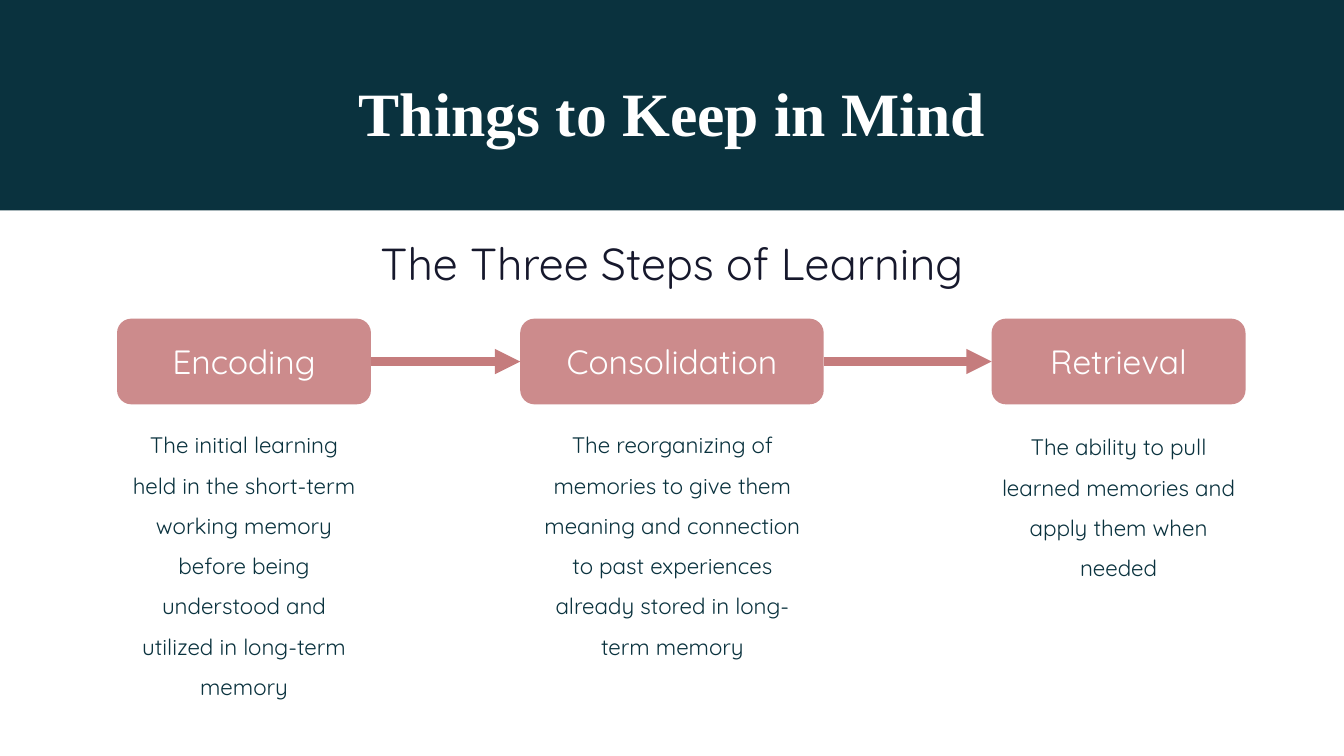
import pptx
import pptx.dml.color
import pptx.enum.shapes
import pptx.enum.text
import pptx.oxml.xmlchemy
import pptx.oxml.ns
import pptx.util
from pptx.util import Cm

COLORS = {"teal": "0A323E", "navy": "16182C", "rose": "C57C7D", "white": "FFFFFF"}
BODY_FONT = "Quicksand"
BOX_TOP, BOX_HEIGHT = 8.03, 2.16


def fill_shape(shape, color):
    shape.shadow.inherit = False
    shape.fill.solid()
    shape.fill.fore_color.rgb = pptx.dml.color.RGBColor.from_string(COLORS[color])
    shape.line.fill.background()


def write_text(shape, text, size, color, font=BODY_FONT, bold=False, spacing=None,
               anchor=pptx.enum.text.MSO_ANCHOR.TOP, wrap=True):
    frame = shape.text_frame
    frame.word_wrap = wrap
    frame.auto_size = pptx.enum.text.MSO_AUTO_SIZE.NONE
    frame.vertical_anchor = anchor
    paragraph = frame.paragraphs[0]
    paragraph.alignment = pptx.enum.text.PP_ALIGN.CENTER
    if spacing:
        paragraph.line_spacing = spacing
    run = paragraph.add_run()
    run.text = text
    run.font.name = font
    run.font.size = pptx.util.Pt(size)
    run.font.bold = bold
    run.font.color.rgb = pptx.dml.color.RGBColor.from_string(COLORS[color])


presentation = pptx.Presentation()
presentation.slide_width = Cm(33.87)
presentation.slide_height = Cm(19.05)
slide = presentation.slides.add_slide(presentation.slide_layouts[5])
shapes = slide.shapes

# Header band, placed behind the title
band = shapes.add_shape(pptx.enum.shapes.MSO_SHAPE.RECTANGLE,
                        0, 0, presentation.slide_width, Cm(5.3))
fill_shape(band, "teal")
shapes._spTree.insert(2, band._element)

# Title and subtitle
title = shapes.title
title.left, title.top, title.width, title.height = Cm(8.13), Cm(1.75), Cm(17.63), Cm(2.13)
write_text(title, "Things to Keep in Mind", 44, "white",
           font="Times New Roman", bold=True, wrap=False)
subtitle = shapes.add_textbox(Cm(8.71), Cm(5.82), Cm(16.46), Cm(1.63))
write_text(subtitle, "The Three Steps of Learning", 32, "navy")

# Steps: name, box left and width, description, its left, top, width and height
steps = [
    ("Encoding", 2.95, 6.4,
     "The initial learning held in the short-term working memory before being "
     "understood and utilized in long-term memory", 2.95, 10.41, 6.4, 7.32),
    ("Consolidation", 13.11, 7.65,
     "The reorganizing of memories to give them meaning and connection to past "
     "experiences already stored in long-term memory", 13.26, 10.41, 7.37, 7.32),
    ("Retrieval", 24.99, 6.4,
     "The ability to pull learned memories and apply them when needed",
     24.99, 10.46, 6.4, 4.24),
]
step_boxes = []
for name, left, width, description, *note_place in steps:
    box = shapes.add_shape(pptx.enum.shapes.MSO_SHAPE.ROUNDED_RECTANGLE,
                           Cm(left), Cm(BOX_TOP), Cm(width), Cm(BOX_HEIGHT))
    fill_shape(box, "rose")
    fill_color = box._element.spPr.find(".//" + pptx.oxml.ns.qn("a:srgbClr"))
    alpha = pptx.oxml.xmlchemy.OxmlElement("a:alpha")
    alpha.set("val", "88000")
    fill_color.append(alpha)
    write_text(box, name, 24, "white", anchor=pptx.enum.text.MSO_ANCHOR.MIDDLE)
    step_boxes.append(box)

    note = shapes.add_textbox(*map(Cm, note_place))
    write_text(note, description, 16, "teal", spacing=1.5)

# Arrows from each step to the next
for start, end in zip(step_boxes, step_boxes[1:]):
    arrow = shapes.add_connector(pptx.enum.shapes.MSO_CONNECTOR.STRAIGHT, 0, 0, 0, 0)
    arrow.begin_connect(start, 3)
    arrow.end_connect(end, 1)
    arrow.line.width = pptx.util.Pt(6)
    arrow.line.color.rgb = pptx.dml.color.RGBColor.from_string(COLORS["rose"])
    head = pptx.oxml.xmlchemy.OxmlElement("a:tailEnd")
    head.set("type", "triangle")
    arrow.line._get_or_add_ln().append(head)
    arrow._element.spPr.append(pptx.oxml.xmlchemy.OxmlElement("a:effectLst"))

presentation.save("out.pptx")
